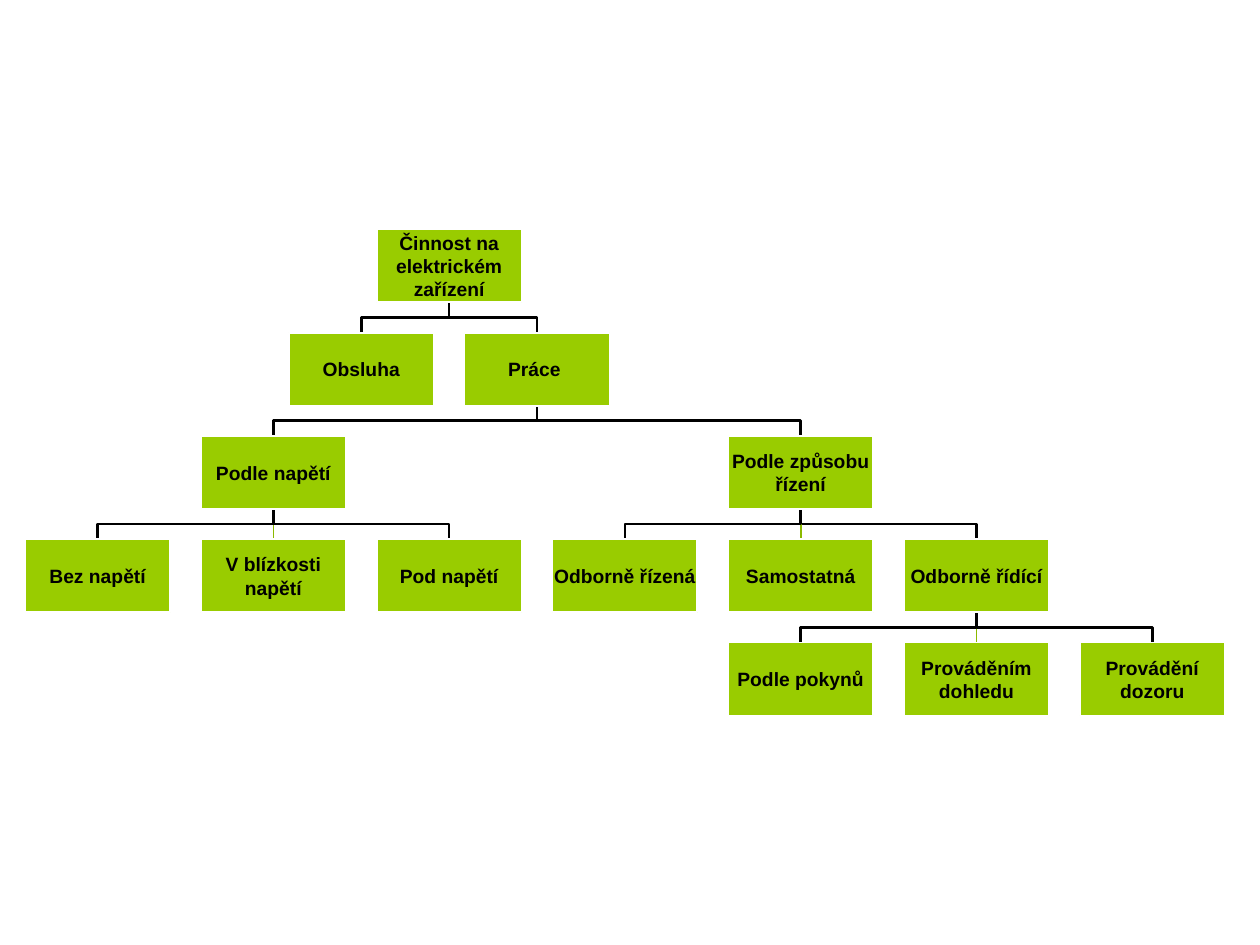
from lxml.etree import SubElement
from pptx import Presentation
from pptx.dml.color import RGBColor
from pptx.enum.shapes import MSO_CONNECTOR, MSO_SHAPE
from pptx.enum.text import MSO_ANCHOR, PP_ALIGN
from pptx.oxml.ns import qn
from pptx.util import Inches, Pt

BLACK = RGBColor(0x00, 0x00, 0x00)
WHITE = RGBColor(0xFF, 0xFF, 0xFF)
LIME = RGBColor(0x99, 0xCC, 0x00)
DARK_LIME = RGBColor(0x8B, 0xB9, 0x00)

BOX_WIDTH, BOX_HEIGHT = Inches(1.15), Inches(0.58)
FIRST_LEFT, FIRST_TOP = Inches(0.2), Inches(1.82)
COLUMN_STEP = (Inches(8.57) - FIRST_LEFT) / 6
ROW_STEP = Inches(0.82)
INSET = Inches(0.01)

# label, column, row, label of the parent
ACTIVITIES = [
    ("Činnost na elektrickém zařízení", 2, 0, None),
    ("Obsluha", 1.5, 1, "Činnost na elektrickém zařízení"),
    ("Práce ", 2.5, 1, "Činnost na elektrickém zařízení"),
    ("Podle napětí", 1, 2, "Práce "),
    ("Bez napětí", 0, 3, "Podle napětí"),
    ("V blízkosti napětí", 1, 3, "Podle napětí"),
    ("Pod napětí", 2, 3, "Podle napětí"),
    ("Podle způsobu řízení", 4, 2, "Práce "),
    ("Odborně řízená", 3, 3, "Podle způsobu řízení"),
    ("Samostatná", 4, 3, "Podle způsobu řízení"),
    ("Odborně řídící", 5, 3, "Podle způsobu řízení"),
    ("Podle pokynů", 4, 4, "Odborně řídící"),
    ("Prováděním dohledu", 5, 4, "Odborně řídící"),
    ("Provádění dozoru", 6, 4, "Odborně řídící"),
]

prs = Presentation()
prs.slide_width, prs.slide_height = Inches(10), Inches(7.5)
slide = prs.slides.add_slide(prs.slide_layouts[6])
shapes = slide.shapes

corners = {
    label: (round(FIRST_LEFT + column * COLUMN_STEP), FIRST_TOP + row * ROW_STEP)
    for label, column, row, _ in ACTIVITIES
}

# Branches, drawn behind the boxes
for label, _, _, parent in reversed(ACTIVITIES):
    if parent is None:
        continue
    child_x, child_top = corners[label]
    parent_x, parent_top = corners[parent]
    child_x += BOX_WIDTH // 2
    parent_x += BOX_WIDTH // 2
    parent_bottom = parent_top + BOX_HEIGHT
    if child_x == parent_x:
        branch = shapes.add_connector(
            MSO_CONNECTOR.STRAIGHT, parent_x, parent_bottom, child_x, child_top)
        SubElement(branch._element.spPr, qn("a:effectLst"))
        branch.line.color.rgb = DARK_LIME
        branch.line.width = Pt(1)
    else:
        middle = (parent_bottom + child_top) // 2
        outline = shapes.build_freeform(parent_x, parent_bottom)
        outline.add_line_segments(
            [(parent_x, middle), (child_x, middle), (child_x, child_top)], close=False)
        branch = outline.convert_to_shape()
        branch.shadow.inherit = False
        branch.fill.background()
        branch.line.color.rgb = BLACK
        branch.line.width = Pt(1.5)

# Boxes
for label, (left, top) in corners.items():
    box = shapes.add_shape(MSO_SHAPE.RECTANGLE, left, top, BOX_WIDTH, BOX_HEIGHT)
    box.shadow.inherit = False
    box.fill.solid()
    box.fill.fore_color.rgb = LIME
    box.line.color.rgb = WHITE
    box.line.width = Pt(1)
    frame = box.text_frame
    frame.word_wrap = True
    frame.vertical_anchor = MSO_ANCHOR.MIDDLE
    frame.margin_left = frame.margin_right = INSET
    frame.margin_top = frame.margin_bottom = INSET
    paragraph = frame.paragraphs[0]
    paragraph.alignment = PP_ALIGN.CENTER
    run = paragraph.add_run()
    run.text = label
    run.font.name = "Arial"
    run.font.size = Pt(11)
    run.font.bold = True
    run.font.color.rgb = BLACK

prs.save("out.pptx")
